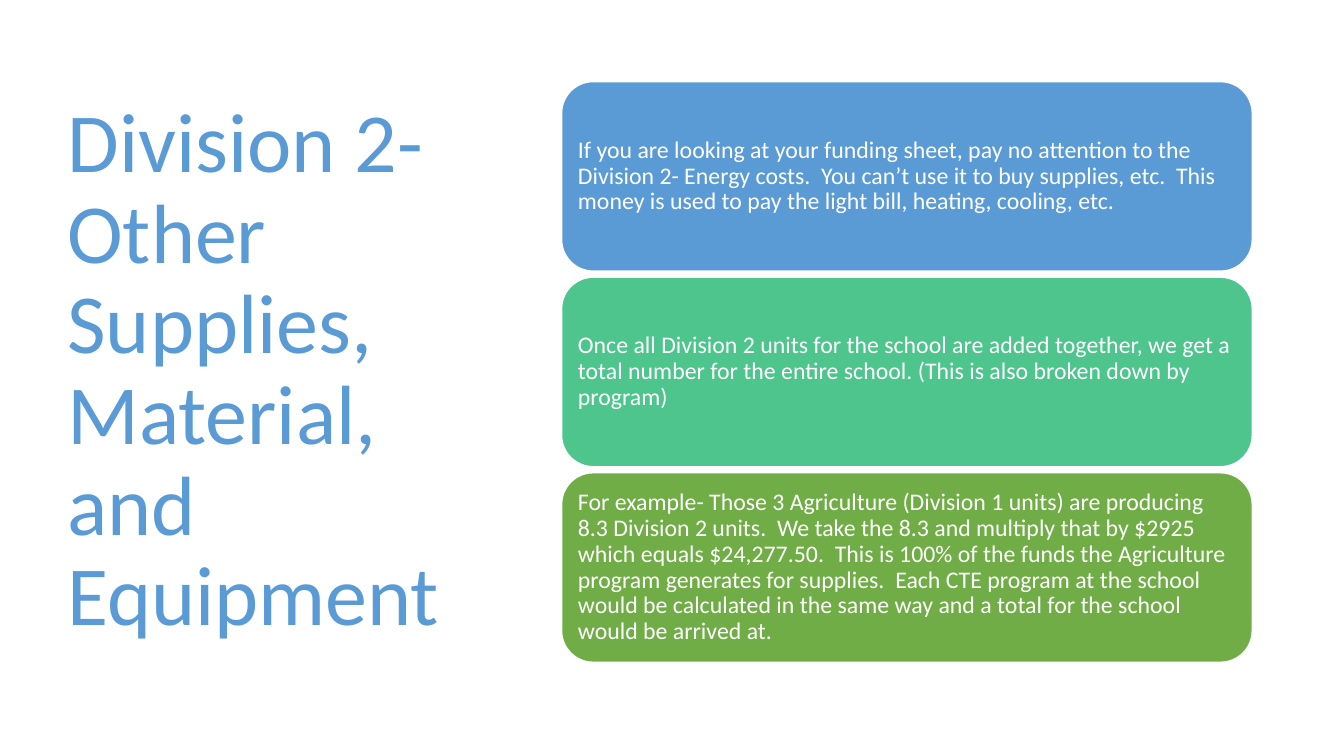
import pptx
import pptx.dml.color
import pptx.enum.shapes
import pptx.enum.text
import pptx.util

SLIDE_WIDTH, SLIDE_HEIGHT = 13.33, 7.5
FONT = "Calibri"
COLOURS = {
    "white": "FFFFFF",
    "blue": "5B9BD5",
    "mint": "4DC58D",
    "green": "70AD47",
}

TITLE = "Division 2- Other Supplies, Material, and Equipment"
TITLE_BOX = (0.57, 0.68, 4.16, 6.02)

CARD_LEFT, CARD_TOP = 5.57, 0.81
CARD_WIDTH, CARD_HEIGHT = 6.85, 1.88
CARD_PITCH = 1.94
CARDS = [
    ("blue", "If you are looking at your funding sheet, pay no attention to the "
             "Division 2- Energy costs.  You can’t use it to buy supplies, etc.  "
             "This money is used to pay the light bill, heating, cooling, etc."),
    ("mint", "Once all Division 2 units for the school are added together, we get a "
             "total number for the entire school. (This is also broken down by program)"),
    ("green", "For example- Those 3 Agriculture (Division 1 units) are producing 8.3 "
              "Division 2 units.  We take the 8.3 and multiply that by $2925 which "
              "equals $24,277.50.  This is 100% of the funds the Agriculture program "
              "generates for supplies.  Each CTE program at the school would be "
              "calculated in the same way and a total for the school would be arrived at."),
]


def colour(name):
    return pptx.dml.color.RGBColor.from_string(COLOURS[name])


def inches(*lengths):
    return [pptx.util.Inches(length) for length in lengths]


def write_text(shape, text, *, size, color, inset_x, inset_y):
    """Fill the shape with one left-aligned, vertically centred paragraph."""
    frame = shape.text_frame
    frame.word_wrap = True
    frame.vertical_anchor = pptx.enum.text.MSO_ANCHOR.MIDDLE
    frame.margin_left = frame.margin_right = pptx.util.Inches(inset_x)
    frame.margin_top = frame.margin_bottom = pptx.util.Inches(inset_y)
    paragraph = frame.paragraphs[0]
    paragraph.alignment = pptx.enum.text.PP_ALIGN.LEFT
    paragraph.line_spacing = 0.9
    run = paragraph.add_run()
    run.text = text
    run.font.name = FONT
    run.font.size = pptx.util.Pt(size)
    run.font.color.rgb = colour(color)


def add_title(slide):
    title = slide.shapes.add_textbox(*inches(*TITLE_BOX))
    write_text(title, TITLE, size=60, color="blue", inset_x=0.1, inset_y=0.05)


def add_card(slide, row, fill, text):
    card = slide.shapes.add_shape(
        pptx.enum.shapes.MSO_SHAPE.ROUNDED_RECTANGLE,
        *inches(CARD_LEFT, CARD_TOP + row * CARD_PITCH, CARD_WIDTH, CARD_HEIGHT))
    card.shadow.inherit = False
    card.fill.solid()
    card.fill.fore_color.rgb = colour(fill)
    card.line.color.rgb = colour("white")
    card.line.width = pptx.util.Pt(1)
    write_text(card, text, size=17, color="white", inset_x=0.07, inset_y=0.07)


def main():
    presentation = pptx.Presentation()
    presentation.slide_width, presentation.slide_height = inches(SLIDE_WIDTH, SLIDE_HEIGHT)
    slide = presentation.slides.add_slide(presentation.slide_layouts[6])
    add_title(slide)
    for row, (fill, text) in enumerate(CARDS):
        add_card(slide, row, fill, text)
    presentation.save("out.pptx")


if __name__ == "__main__":
    main()
